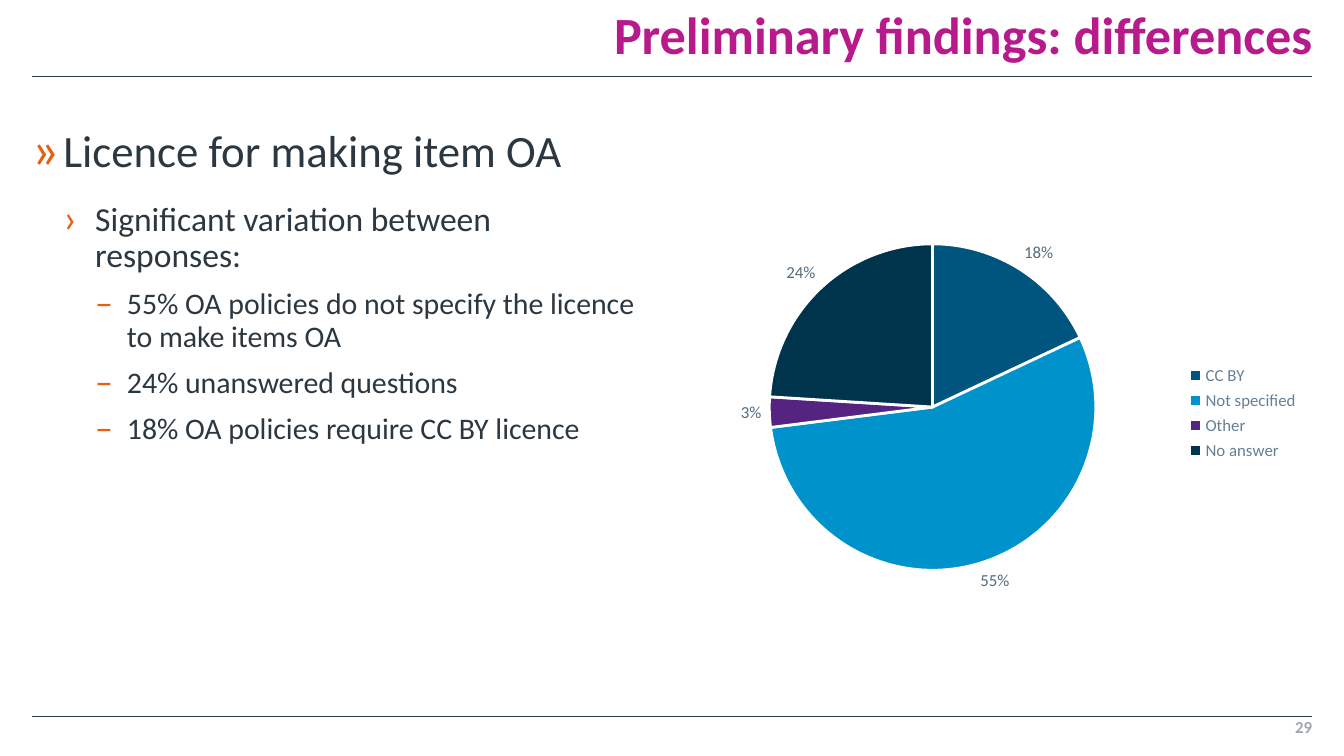
"""Build the slide on licence differences, with a bullet list and a pie chart."""
import pptx
import pptx.chart.data
import pptx.dml.color
import pptx.enum.chart
import pptx.enum.shapes
import pptx.enum.text
import pptx.oxml
import pptx.oxml.ns
import pptx.util

Cm, Pt = pptx.util.Cm, pptx.util.Pt
rgb = pptx.dml.color.RGBColor.from_string
ALIGN = pptx.enum.text.PP_ALIGN
ANCHOR = pptx.enum.text.MSO_ANCHOR
NS = pptx.oxml.ns.nsdecls("a")
C = {"text": "2C3841", "title": "B71A8B", "bullet": "E85E12", "number": "9BA7A8",
     "legend": "658095", "label": "546C7D", "white": "FFFFFF"}


def set_font(font, size, color, bold=False):
    for k, v in {"name": "Calibri", "size": Pt(size), "bold": bold}.items():
        setattr(font, k, v)
    font.color.rgb = rgb(C[color])


def add_box(x, y, w, h, anchor=ANCHOR.TOP):
    tf = s.shapes.add_textbox(Cm(x), Cm(y), Cm(w), Cm(h)).text_frame
    fmt = {"word_wrap": True, "vertical_anchor": anchor, "margin_left": 0,
           "margin_top": 0, "margin_right": 0, "margin_bottom": 0}
    for k, v in fmt.items():
        setattr(tf, k, v)
    return tf


prs = pptx.Presentation()
prs.slide_width, prs.slide_height = Cm(25.4), Cm(14.29)
s = prs.slides.add_slide(prs.slide_layouts[6])

for y in (1.45, 13.54):
    ln = s.shapes.add_connector(pptx.enum.shapes.MSO_CONNECTOR.STRAIGHT,
                                Cm(0.6), Cm(y), Cm(24.8), Cm(y))
    ln.line.color.rgb = rgb(C["text"])
    ln.line.width = Pt(0.5)
    ln._element.spPr.append(pptx.oxml.parse_xml(f"<a:effectLst {NS}/>"))

for text, box, size, color, spacing in [
    ("Preliminary findings: differences", (7.7, 0, 17.1, 1.25, ANCHOR.BOTTOM), 28, "title", 0.9),
    ("29", (22.8, 13.54, 2, 0.46), 9, "number", 1.0),
]:
    p = add_box(*box).paragraphs[0]
    p.alignment, p.line_spacing = ALIGN.RIGHT, spacing
    r = p.add_run()
    r.text = text
    set_font(r.font, size, color, True)

levels = [("»", 24, 0, 6), ("›", 18, 7.5, 0), ("–", 16, 7.5, 0)]
items = [
    (0, "Licence for making item OA"),
    (1, "Significant variation between responses:"),
    (2, "55% OA policies do not specify the licence to make items OA"),
    (2, "24% unanswered questions"),
    (2, "18% OA policies require CC BY licence"),
]
tf = add_box(0.6, 2.44, 11.4, 10.7)
for i, (level, text) in enumerate(items):
    char, size, before, after = levels[level]
    p = tf.add_paragraph() if i else tf.paragraphs[0]
    fmt = {"level": level, "line_spacing": 0.9, "alignment": ALIGN.LEFT,
           "space_before": Pt(before), "space_after": Pt(after)}
    for k, v in fmt.items():
        setattr(p, k, v)
    pPr = p._p.get_or_add_pPr()
    pPr.set("marL", str(Cm(0.6 * (level + 1))))
    pPr.set("indent", str(-Cm(0.6)))
    for xml in (f'<a:buClr {NS}><a:srgbClr val="{C["bullet"]}"/></a:buClr>',
                f'<a:buSzPct {NS} val="120000"/>',
                f'<a:buFont {NS} typeface="Calibri"/>',
                f'<a:buChar {NS} char="{char}"/>'):
        pPr.append(pptx.oxml.parse_xml(xml))
    r = p.add_run()
    r.text = text
    set_font(r.font, size, "text")

slices = [("CC BY", 18, "00557F"), ("Not specified", 55, "0092CB"),
          ("Other", 3, "552481"), ("No answer", 24, "00334C")]
cd = pptx.chart.data.CategoryChartData()
cd.categories = [name for name, _, _ in slices]
cd.add_series("Series 1", [value for _, value, _ in slices])
chart = s.shapes.add_chart(pptx.enum.chart.XL_CHART_TYPE.PIE, Cm(12.1), Cm(4),
                           Cm(12.7), Cm(7.62), cd).chart
set_font(chart.font, 10, "text")
chart.has_title = False
chart.has_legend = True
chart.legend.position = pptx.enum.chart.XL_LEGEND_POSITION.RIGHT
chart.legend.include_in_layout = False
set_font(chart.legend.font, 9, "legend")

plot = chart.plots[0]
plot.vary_by_categories = True
for i, (_, _, color) in enumerate(slices):
    f = plot.series[0].points[i].format
    f.fill.solid()
    f.fill.fore_color.rgb = rgb(color)
    f.line.color.rgb = rgb(C["white"])
    f.line.width = Pt(1.5)

plot.has_data_labels = True
labels = plot.data_labels
for k, v in {"show_percentage": True, "show_value": False, "number_format": "0%",
             "number_format_is_linked": False,
             "position": pptx.enum.chart.XL_LABEL_POSITION.OUTSIDE_END}.items():
    setattr(labels, k, v)
set_font(labels.font, 9, "label")

area = chart._chartSpace.chart.plotArea
for old in area.findall(pptx.oxml.ns.qn("c:layout")):
    area.remove(old)
frame = {"x": 0.19, "y": 0.08, "w": 0.49, "h": 0.81}
modes = "".join(f'<c:{k}Mode val="edge"/>' for k in "xy")
sizes = "".join(f'<c:{k} val="{v}"/>' for k, v in frame.items())
area.insert(0, pptx.oxml.parse_xml(
    f'<c:layout {pptx.oxml.ns.nsdecls("c")}><c:manualLayout><c:layoutTarget val="inner"/>'
    f'{modes}{sizes}</c:manualLayout></c:layout>'))

prs.save("out.pptx")
